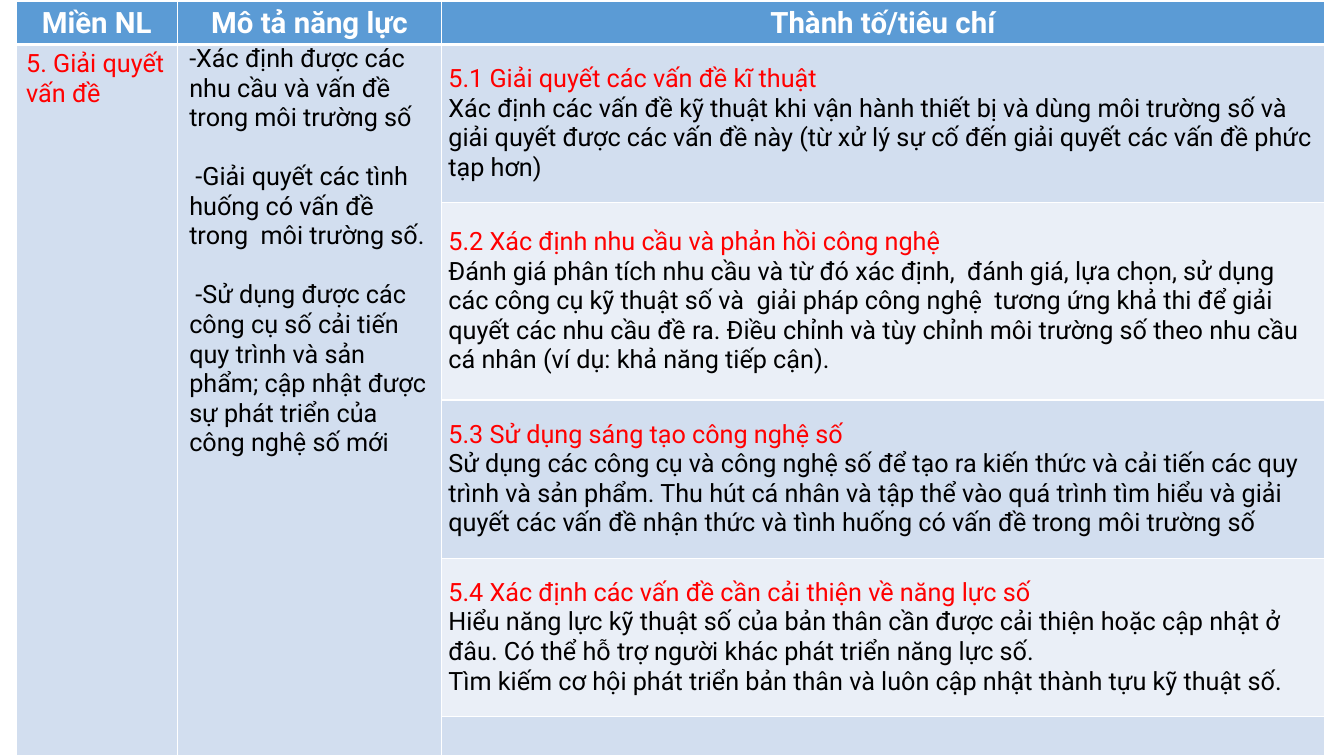
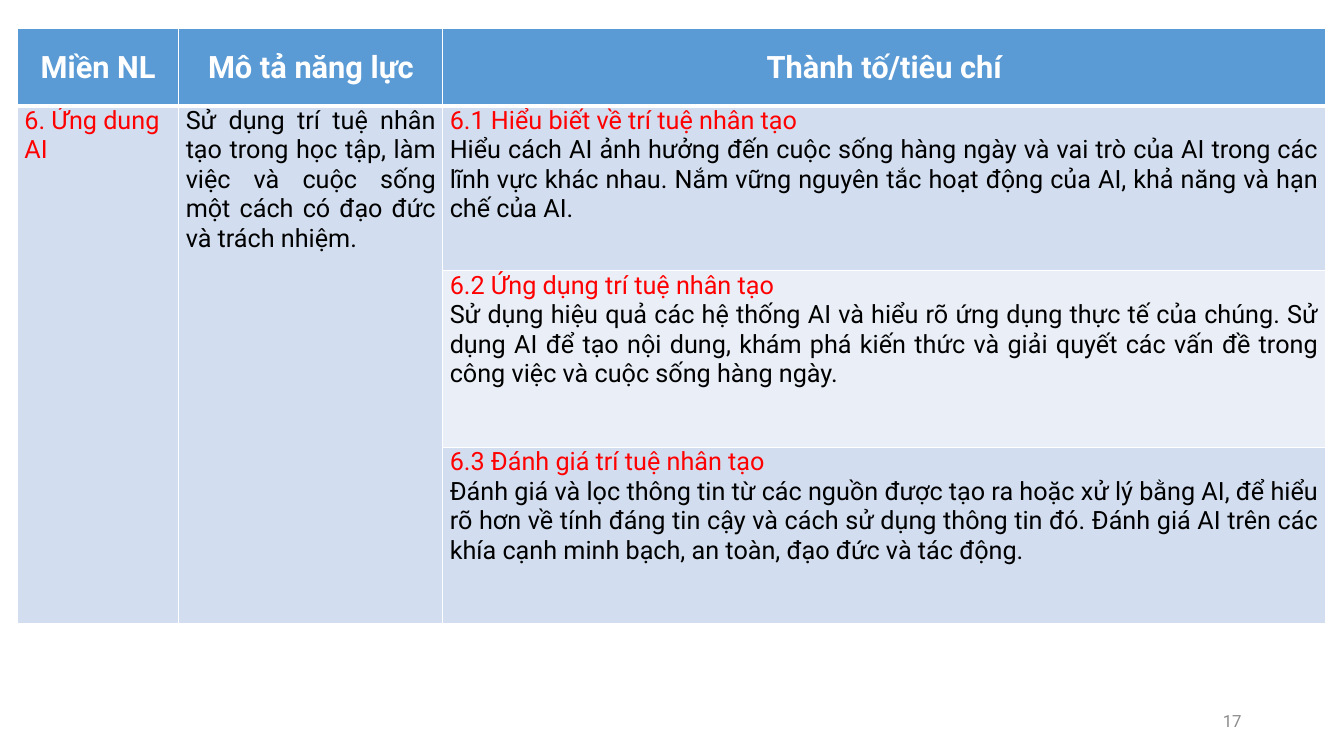
from lxml.etree import SubElement
from pptx import Presentation
from pptx.dml.color import RGBColor
from pptx.enum.text import MSO_ANCHOR, PP_ALIGN
from pptx.oxml.ns import qn
from pptx.util import Pt

FONT = "Roboto"
WHITE = RGBColor(0xFF, 0xFF, 0xFF)
BLACK = RGBColor(0x00, 0x00, 0x00)
RED = RGBColor(0xFF, 0x00, 0x00)
GRAY = RGBColor(0x8C, 0x8C, 0x8C)
HEADER_BLUE = RGBColor(0x5B, 0x9B, 0xD5)
BANDS = [RGBColor(0xD2, 0xDE, 0xEF), RGBColor(0xEA, 0xEF, 0xF7)]

HEADERS = ["Miền NL", "Mô tả năng lực", "Thành tố/tiêu chí"]
COLUMN_WIDTHS = [115.2, 188.6, 630.7]
BODY_SIZE = 18
LINE_GAP = 21

# Content: each criterion is a red heading followed by its paragraphs
competences = [
    {
        "position": (11.5, 0.7),
        "row_heights": [31, 113, 141, 113, 113, 28],
        "header_size": 21,
        "alignment": PP_ALIGN.LEFT,
        "anchor": MSO_ANCHOR.MIDDLE,
        "domain": "5. Giải quyết vấn đề",
        "domain_margins": (7.2, 3.6),
        "description_margins": (8.5, 0),
        "description": [
            "-Xác định được các nhu cầu và vấn đề trong môi trường số",
            " -Giải quyết các tình huống có vấn đề trong  môi trường số.",
            " -Sử dụng được các công cụ số cải tiến quy trình và sản phẩm; "
            "cập nhật được sự phát triển của công nghệ số mới",
        ],
        "criteria": [
            ["5.1 Giải quyết các vấn đề kĩ thuật",
             "Xác định các vấn đề kỹ thuật khi vận hành thiết bị và dùng môi trường số và "
             "giải quyết được các vấn đề này (từ xử lý sự cố đến giải quyết các vấn đề "
             "phức tạp hơn)"],
            ["5.2 Xác định nhu cầu và phản hồi công nghệ",
             "Đánh giá phân tích nhu cầu và từ đó xác định,  đánh giá, lựa chọn, sử dụng "
             "các công cụ kỹ thuật số và  giải pháp công nghệ  tương ứng khả thi để giải "
             "quyết các nhu cầu đề ra. Điều chỉnh và tùy chỉnh môi trường số theo nhu cầu "
             "cá nhân (ví dụ: khả năng tiếp cận)."],
            ["5.3 Sử dụng sáng tạo công nghệ số",
             "Sử dụng các công cụ và công nghệ số để tạo ra kiến thức và cải tiến các quy "
             "trình và sản phẩm. Thu hút cá nhân và tập thể vào quá trình tìm hiểu và giải "
             "quyết các vấn đề nhận thức và tình huống có vấn đề trong môi trường số"],
            ["5.4 Xác định các vấn đề cần cải thiện về năng lực số",
             "Hiểu năng lực kỹ thuật số của bản thân cần được cải thiện hoặc cập nhật ở "
             "đâu. Có thể hỗ trợ người khác phát triển năng lực số.",
             "Tìm kiếm cơ hội phát triển bản thân và luôn cập nhật thành tựu kỹ thuật số."],
        ],
        "page": None,
    },
    {
        "position": (12.5, 20),
        "row_heights": [55.5, 118, 126, 126],
        "header_size": 22,
        "alignment": PP_ALIGN.JUSTIFY,
        "anchor": MSO_ANCHOR.TOP,
        "domain": "6. Ứng dung AI",
        "domain_margins": (5, 0),
        "description_margins": (5, 0),
        "description": [
            "Sử dụng trí tuệ nhân tạo trong học tập, làm việc và cuộc sống một cách có "
            "đạo đức và trách nhiệm.",
        ],
        "criteria": [
            ["6.1 Hiểu biết về trí tuệ nhân tạo",
             "Hiểu cách AI ảnh hưởng đến cuộc sống hàng ngày và vai trò của AI trong các "
             "lĩnh vực khác nhau. Nắm vững nguyên tắc hoạt động của AI, khả năng và hạn "
             "chế của AI."],
            ["6.2 Ứng dụng trí tuệ nhân tạo",
             "Sử dụng hiệu quả các hệ thống AI và hiểu rõ ứng dụng thực tế của chúng. Sử "
             "dụng AI để tạo nội dung, khám phá kiến thức và giải quyết các vấn đề trong "
             "công việc và cuộc sống hàng ngày."],
            ["6.3 Đánh giá trí tuệ nhân tạo",
             "Đánh giá và lọc thông tin từ các nguồn được tạo ra hoặc xử lý bằng AI, để "
             "hiểu rõ hơn về tính đáng tin cậy và cách sử dụng thông tin đó. Đánh giá AI "
             "trên các khía cạnh minh bạch, an toàn, đạo đức và tác động."],
        ],
        "page": "17",
    },
]


def style_cell(cell, fill, top_width, bottom_width):
    """Give a cell white borders, a solid fill and no margins."""
    properties = cell._tc.get_or_add_tcPr()
    widths = {"a:lnL": 1, "a:lnR": 1, "a:lnT": top_width, "a:lnB": bottom_width}
    for tag, width in widths.items():
        line = SubElement(properties, qn(tag), w=str(Pt(width)))
        SubElement(SubElement(line, qn("a:solidFill")), qn("a:srgbClr"), val=str(WHITE))
    cell.fill.solid()
    cell.fill.fore_color.rgb = fill
    cell.margin_left = cell.margin_right = cell.margin_top = cell.margin_bottom = 0


def write_text(container, texts, colors, size, alignment, margins=(0, 0), bold=False):
    """Write one paragraph per text; margins are (side, top and bottom)."""
    container.margin_left = container.margin_right = Pt(margins[0])
    container.margin_top = container.margin_bottom = Pt(margins[1])
    # A cell holds a text frame; a text box passes its frame directly
    frame = getattr(container, "text_frame", container)
    for index, (text, color) in enumerate(zip(texts, colors)):
        paragraph = frame.add_paragraph() if index else frame.paragraphs[0]
        paragraph.text = text
        paragraph.alignment = alignment
        paragraph.font.name = FONT
        paragraph.font.size = Pt(size)
        paragraph.font.bold = bold
        paragraph.font.color.rgb = color
    return frame.paragraphs


presentation = Presentation()
presentation.slide_width = Pt(960)
presentation.slide_height = Pt(540)

for competence in competences:
    slide = presentation.slides.add_slide(presentation.slide_layouts[6])
    heights = competence["row_heights"]
    alignment = competence["alignment"]

    # Table grid
    left, top = competence["position"]
    table = slide.shapes.add_table(
        len(heights), len(COLUMN_WIDTHS), Pt(left), Pt(top),
        Pt(sum(COLUMN_WIDTHS)), Pt(sum(heights)),
    ).table
    table.horz_banding = False
    for column, width in zip(table.columns, COLUMN_WIDTHS):
        column.width = Pt(width)
    for row_index, (row, height) in enumerate(zip(table.rows, heights)):
        row.height = Pt(height)
        for column_index, cell in enumerate(row.cells):
            band = BANDS[(row_index - 1) % 2 if column_index == 2 else 0]
            style_cell(cell, band if row_index else HEADER_BLUE,
                       3 if row_index == 1 else 1, 1 if row_index else 3)

    # Header row
    for column_index, header in enumerate(HEADERS):
        cell = table.cell(0, column_index)
        cell.vertical_anchor = MSO_ANCHOR.MIDDLE
        paragraphs = write_text(cell, [header], [WHITE], competence["header_size"],
                                PP_ALIGN.CENTER, (3, 0.5), bold=True)
        paragraphs[0].line_spacing = 1.07

    # Domain and description, each spanning all body rows
    for column_index in range(2):
        table.cell(1, column_index).merge(table.cell(len(heights) - 1, column_index))
    write_text(table.cell(1, 0), [competence["domain"]], [RED], BODY_SIZE,
               PP_ALIGN.LEFT, competence["domain_margins"])
    description = competence["description"]
    paragraphs = write_text(table.cell(1, 1), description, [BLACK] * len(description),
                            BODY_SIZE, alignment, competence["description_margins"])
    for paragraph in paragraphs[1:]:
        paragraph.space_before = Pt(LINE_GAP)

    # Criteria
    for row_index, texts in enumerate(competence["criteria"], start=1):
        cell = table.cell(row_index, 2)
        cell.vertical_anchor = competence["anchor"]
        write_text(cell, texts, [RED] + [BLACK] * (len(texts) - 1), BODY_SIZE,
                   alignment, (5, 0))

    # Page number
    if competence["page"]:
        text_box = slide.shapes.add_textbox(Pt(678), Pt(500.5), Pt(216), Pt(28.75))
        frame = text_box.text_frame
        frame.word_wrap = True
        frame.vertical_anchor = MSO_ANCHOR.MIDDLE
        write_text(frame, [competence["page"]], [GRAY], 12, PP_ALIGN.RIGHT, (7.2, 3.6))

presentation.save("out.pptx")
